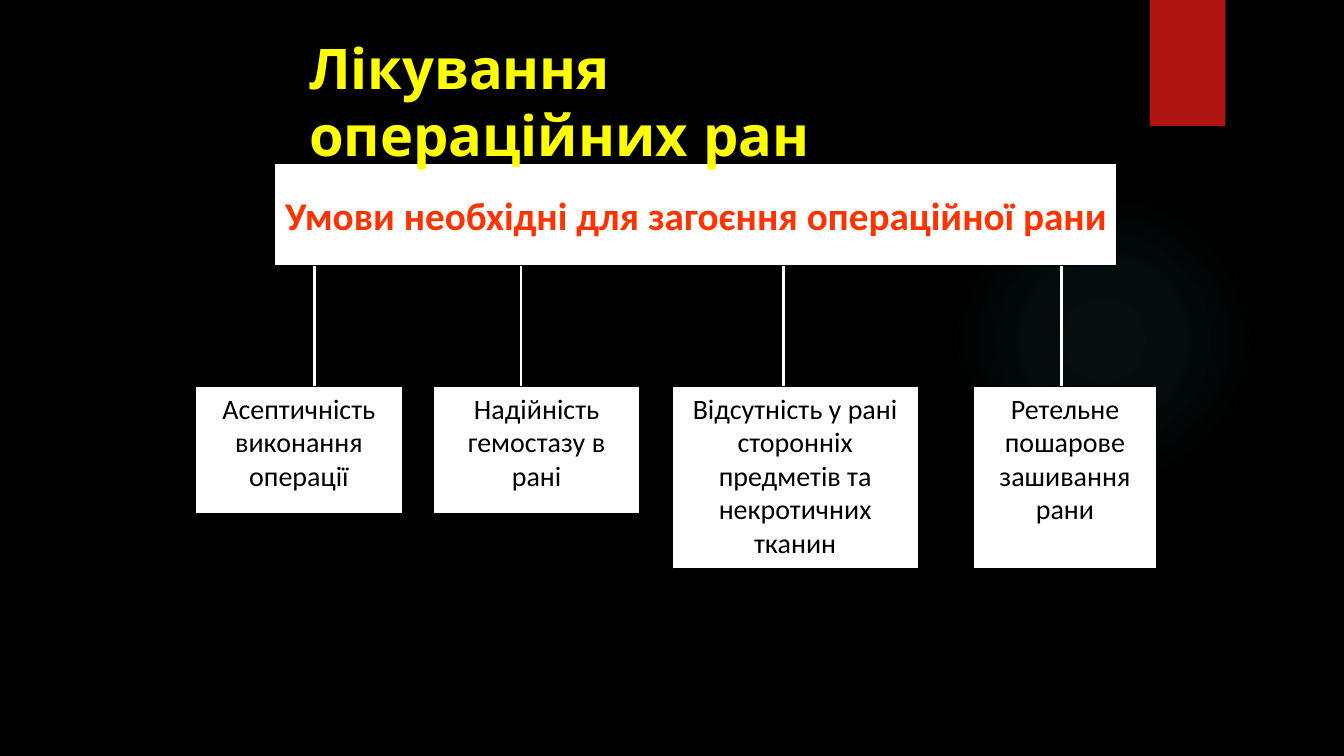
from lxml import etree
from pptx import Presentation
from pptx.dml.color import RGBColor
from pptx.enum.shapes import MSO_CONNECTOR, MSO_SHAPE
from pptx.enum.text import MSO_ANCHOR, PP_ALIGN
from pptx.oxml import parse_xml
from pptx.oxml.ns import nsdecls, qn
from pptx.util import Cm, Pt

RECTANGLE, OVAL = MSO_SHAPE.RECTANGLE, MSO_SHAPE.OVAL
STRAIGHT = MSO_CONNECTOR.STRAIGHT
CENTER, LEFT = PP_ALIGN.CENTER, PP_ALIGN.LEFT
TOP, MIDDLE = MSO_ANCHOR.TOP, MSO_ANCHOR.MIDDLE

BLACK, WHITE, RED, TEAL = "000000", "FFFFFF", "B01513", "50B9C1"
TITLE_FORMAT = {"name": "Quicksand", "size": Pt(40), "bold": True}
HEADING_FORMAT = {"name": "Calibri", "size": Pt(28), "bold": True}
CONDITION_FORMAT = {"name": "Calibri", "size": Pt(20), "bold": False}
GLOW_STOPS = [(0, 7), (36, 6), (69, 0)]

HEADING = "Умови необхідні для загоєння операційної рани"
CONDITIONS = [
    ("Асептичність виконання операції", 0, 5.21, 3.2, 2.99),
    ("Надійність гемостазу в рані", 5.99, 5.21, 3.2, 8.2),
    ("Відсутність у рані сторонніх предметів та некротичних тканин", 12.01, 6.2, 4.6, 14.81),
    ("Ретельне пошарове зашивання рани", 19.61, 4.6, 4.6, 21.82),
]


def color(hex_code):
    """Turn a hex string into a colour."""
    return RGBColor.from_string(hex_code)


def write(frame, text, font_format, hex_code, align, anchor=TOP, wrap=True):
    """Put one formatted paragraph into a text frame."""
    frame.word_wrap = wrap
    frame.vertical_anchor = anchor
    paragraph = frame.paragraphs[0]
    paragraph.alignment = align
    run = paragraph.add_run()
    run.text = text
    for attribute, value in font_format.items():
        setattr(run.font, attribute, value)
    run.font.color.rgb = color(hex_code)


def add_panel(slide, box, fill, outline=None, preset=RECTANGLE):
    """Add a flat filled shape in the given box, in centimetres."""
    panel = slide.shapes.add_shape(preset, *map(Cm, box))
    panel.shadow.inherit = False
    panel.fill.solid()
    panel.fill.fore_color.rgb = color(fill)
    if outline:
        panel.line.color.rgb = color(outline)
        panel.line.width = Pt(0.75)
    else:
        panel.line.fill.background()
    return panel


def add_glow(slide, box):
    """Add a faint radial glow that fades to nothing."""
    glow = add_panel(slide, box, TEAL, preset=OVAL)
    stops = "".join(
        f'<a:gs pos="{place * 1000}"><a:srgbClr val="{TEAL}">'
        f'<a:alpha val="{alpha * 1000}"/></a:srgbClr></a:gs>'
        for place, alpha in GLOW_STOPS
    )
    gradient = parse_xml(
        f'<a:gradFill {nsdecls("a")}><a:gsLst>{stops}</a:gsLst><a:path path="circle">'
        '<a:fillToRect l="50000" t="50000" r="50000" b="50000"/></a:path></a:gradFill>'
    )
    properties = glow.fill._xPr
    properties.replace(properties.find(qn("a:solidFill")), gradient)


def add_backdrop(slide):
    """Paint the black background, the glow and the red tab."""
    slide.background.fill.solid()
    slide.background.fill.fore_color.rgb = color(BLACK)
    add_glow(slide, (23.9, 4.65, 7.82, 7.82))
    add_panel(slide, (28.98, 0, 1.9, 3.18), RED)


def add_stem(slide, x, top, bottom):
    """Draw a vertical white line from the heading to a condition."""
    stem = slide.shapes.add_connector(STRAIGHT, Cm(x), Cm(top), Cm(x), Cm(bottom))
    stem.line.color.rgb = color(WHITE)
    stem.line.width = Pt(2)
    etree.SubElement(stem._element.spPr, qn("a:effectLst"))


def add_scheme(slide, left, top):
    """Draw the heading with its four conditions from the given corner."""
    heading_height, conditions_top = 2.59, top + 5.62
    heading = add_panel(slide, (left + 2, top, 21.21, heading_height), WHITE, BLACK)
    write(heading.text_frame, HEADING, HEADING_FORMAT, "FF3300", CENTER, MIDDLE, False)
    for text, offset, width, height, stem_offset in CONDITIONS:
        add_stem(slide, left + stem_offset, top + heading_height, conditions_top)
        condition = add_panel(slide, (left + offset, conditions_top, width, height), WHITE, BLACK)
        write(condition.text_frame, text, CONDITION_FORMAT, BLACK, CENTER)


def add_title(slide, box):
    """Add the yellow slide title in the given box."""
    title = slide.shapes.add_textbox(*map(Cm, box))
    write(title.text_frame, "Лікування операційних ран", TITLE_FORMAT, "FFFF00", LEFT)


def main():
    """Build and save the slide."""
    presentation = Presentation()
    presentation.slide_width, presentation.slide_height = Cm(33.87), Cm(19.05)
    slide = presentation.slides.add_slide(presentation.slide_layouts[6])
    add_backdrop(slide)
    add_scheme(slide, 4.93, 4.11)
    add_title(slide, (7.54, 0.71, 17.58, 1.96))
    presentation.save("out.pptx")


if __name__ == "__main__":
    main()
